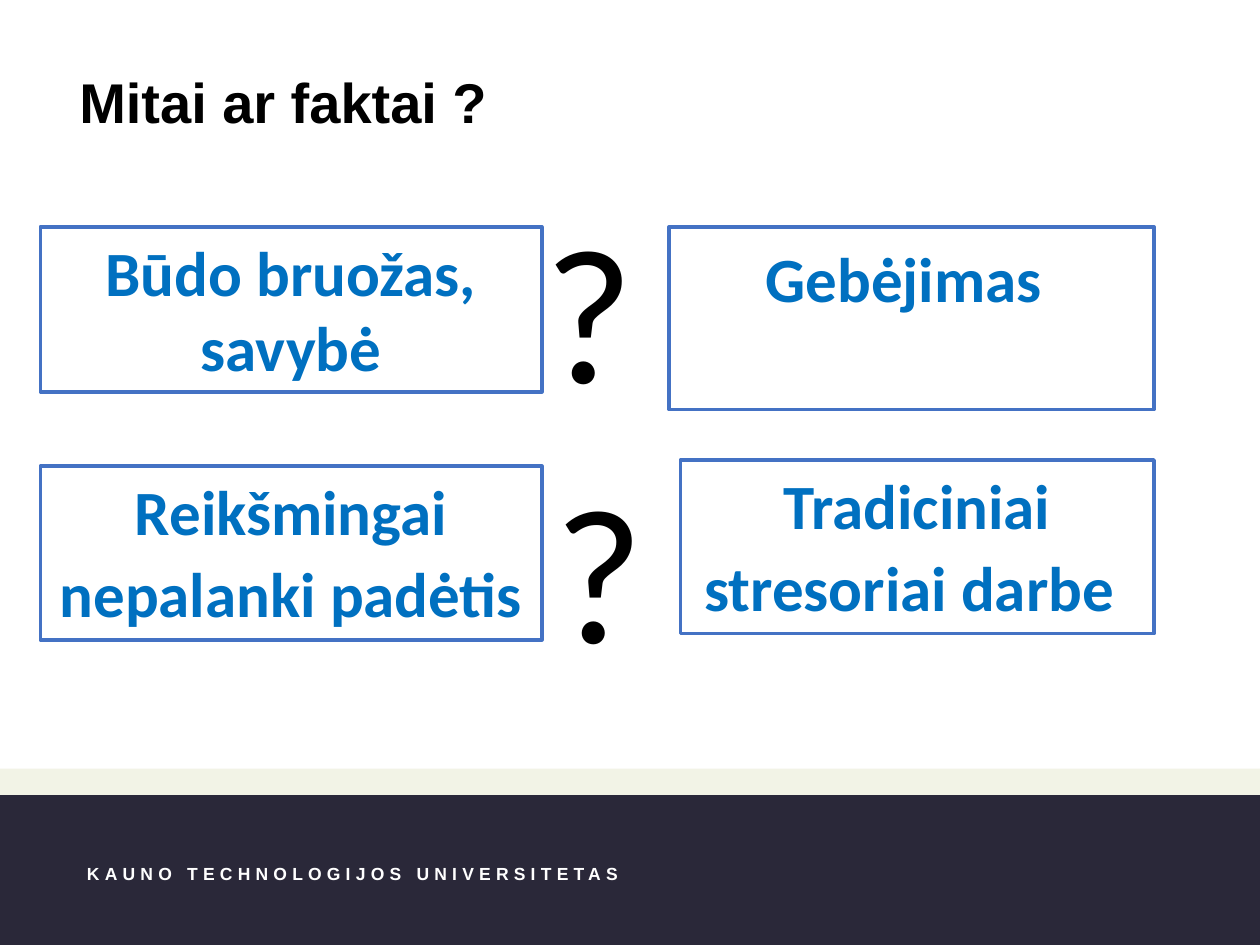
from pptx import Presentation
from pptx.dml.color import RGBColor
from pptx.enum.shapes import MSO_SHAPE
from pptx.enum.text import MSO_ANCHOR, PP_ALIGN
from pptx.util import Inches, Pt

RECTANGLE = MSO_SHAPE.RECTANGLE
TOP = MSO_ANCHOR.TOP
LEFT, CENTER = PP_ALIGN.LEFT, PP_ALIGN.CENTER
WIDTH, HEIGHT = 10, 7.5
BLUE, BLACK, WHITE = "0070C0", "000000", "FFFFFF"


def color(value):
    return RGBColor.from_string(value)


def write(box, text, size, ink, face="Calibri", bold=True, align=LEFT, tail=False):
    """Fill the box with one paragraph; tail adds a larger closing space."""
    frame = box.text_frame
    frame.word_wrap = True
    frame.vertical_anchor = TOP
    para = frame.paragraphs[0]
    para.alignment = align
    pieces = [(text, size)] + ([(" ", 40)] if tail else [])
    for piece, points in pieces:
        span = para.add_run()
        span.text = piece
        looks = {"name": face, "size": Pt(points), "bold": bold}
        for name, value in looks.items():
            setattr(span.font, name, value)
        span.font.color.rgb = color(ink)
    return para


deck = Presentation()
deck.slide_width, deck.slide_height = Inches(WIDTH), Inches(HEIGHT)
page = deck.slides.add_slide(deck.slide_layouts[6])
shapes = page.shapes

# Footer bands, both reaching the bottom edge
for band_height, fill in [(1.4, "F2F3E6"), (1.19, "2A2839")]:
    band = shapes.add_shape(RECTANGLE, 0, Inches(HEIGHT - band_height),
                            Inches(WIDTH), Inches(band_height))
    band.shadow.inherit = False
    band.fill.solid()
    band.fill.fore_color.rgb = color(fill)
    band.line.fill.background()

footer = shapes.add_textbox(Inches(0.69), Inches(6.85), Inches(4.31), Inches(0.17))
para = write(footer, "KAUNO TECHNOLOGIJOS UNIVERSITETAS", 10, WHITE, "Arial")
para.runs[0].font._element.set("spc", "300")
footer.text_frame.word_wrap = False

title = shapes.add_textbox(Inches(0.63), Inches(0.61), Inches(8.73), Inches(0.75))
para = write(title, "Mitai ar faktai ?", 32, BLACK, "Arial")
para.line_spacing = Pt(33)

for box in (footer, title):
    for side in ("margin_left", "margin_top"):
        setattr(box.text_frame, side, 0)
for side in ("margin_right", "margin_bottom"):
    setattr(footer.text_frame, side, 0)

# Statements: left, top, width, height, text, larger closing space
statements = [
    (0.32, 1.8, 3.98, 1.31, "Būdo bruožas, savybė", False),
    (5.31, 1.8, 3.85, 1.45, "Gebėjimas", True),
    (0.32, 3.7, 3.98, 1.38, "Reikšmingai nepalanki padėtis", True),
    (5.4, 3.65, 3.76, 1.38, "Tradiciniai stresoriai darbe", True),
]
for *place, text, tail in statements:
    statement = shapes.add_shape(RECTANGLE, *map(Inches, place))
    statement.shadow.inherit = False
    statement.fill.background()
    statement.line.color.rgb = color("4472C4")
    statement.line.width = Pt(2)
    write(statement, text, 36, BLUE, align=CENTER, tail=tail)

# Question marks between the statement pairs
for left, top in [(4.22, 1.47), (4.3, 3.53)]:
    question = shapes.add_textbox(Inches(left), Inches(top), Inches(0.95), Inches(1.95))
    write(question, "?", 110, BLACK, bold=False)

deck.save("out.pptx")
